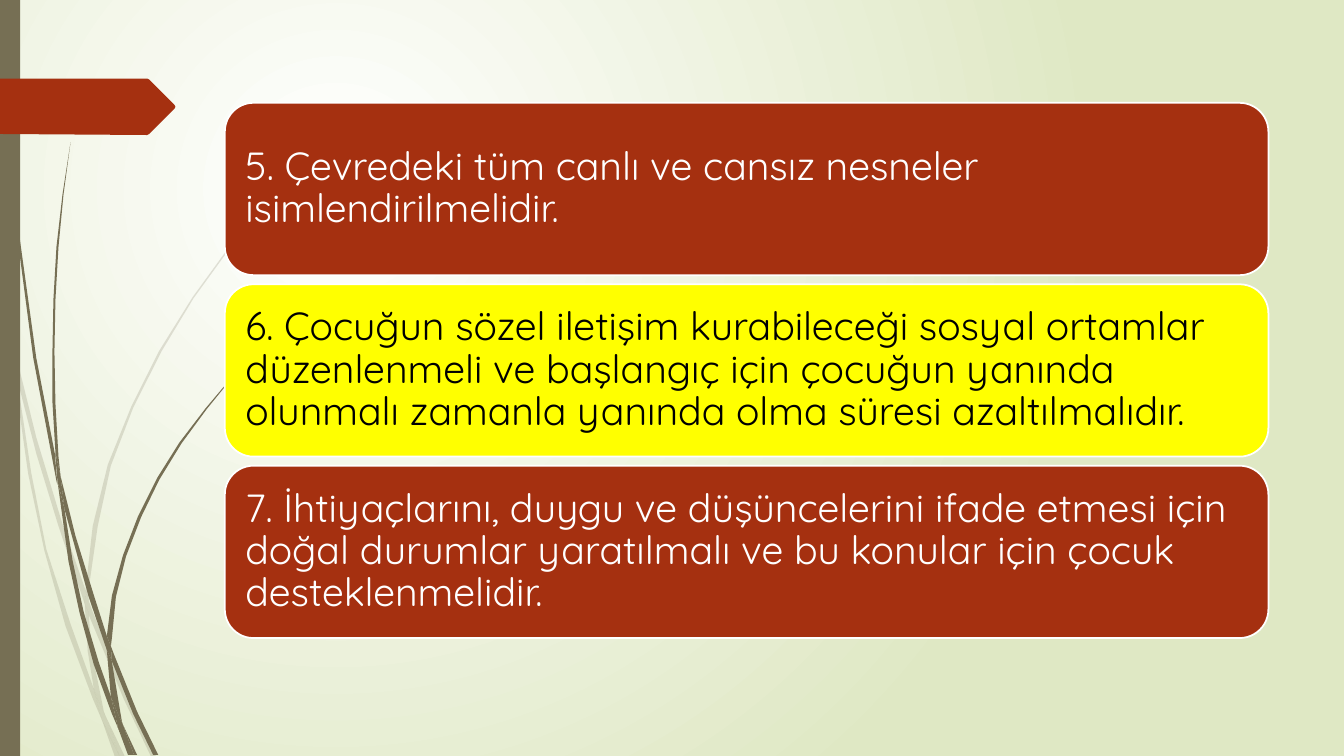
from lxml.etree import SubElement
from pptx import Presentation
from pptx.dml.color import RGBColor
from pptx.enum.shapes import MSO_SHAPE as Preset
from pptx.enum.text import MSO_ANCHOR as Anchor, PP_ALIGN as Align
from pptx.oxml.ns import qn
from pptx.util import Inches, Pt

OLIVE, RUST, YELLOW, WHITE, BLACK = "766F54", "A53010", "FFFF00", "FFFFFF", "000000"


def paint(shape, color):
    """Fill a shape with a hex colour, without line or shadow."""
    shape.shadow.inherit = False
    shape.fill.solid()
    shape.fill.fore_color.rgb = RGBColor.from_string(color)
    shape.line.fill.background()


def add_outline(shapes, points, color):
    """Add a closed shape through points given in hundredths of an inch."""
    builder = shapes.build_freeform(*points[0], scale=Inches(0.01))
    builder.add_line_segments(points[1:], close=True)
    outline = builder.convert_to_shape()
    paint(outline, color)
    return outline


prs = Presentation()
prs.slide_width, prs.slide_height = Inches(13.33), Inches(7.5)
slide = prs.slides.add_slide(prs.slide_layouts[6])

# Background: light spot that fades outwards
backdrop = slide.background.fill
backdrop.gradient()
for stop, color in zip(backdrop.gradient_stops, (WHITE, "DFE8C4")):
    stop.color.rgb = RGBColor.from_string(color)
for stop, position in zip(backdrop.gradient_stops, (0, 1)):
    stop.position = position
gradient = slide.element.find(".//" + qn("a:gradFill"))
gradient.remove(gradient.find(qn("a:lin")))
glow = SubElement(gradient, qn("a:path"), path="circle")
SubElement(glow, qn("a:fillToRect"), l="50000", t="50000", r="100000", b="100000")

# Grass blades, in hundredths of an inch
pale_blades = [
    [(11, 350), (9, 322), (0, 282), (0, 299), (10, 344)],
    [(58, 522), (84, 599), (85, 586), (62, 520), (36, 434), (14, 345), (17, 376), (36, 450)],
    [(92, 607), (88, 596), (88, 610), (123, 694), (150, 751), (155, 751), (127, 692)],
    [(119, 751), (124, 751), (105, 711)],
    [(93, 683), (70, 619), (46, 545), (31, 469), (17, 376), (11, 350), (28, 470),
     (44, 546), (65, 621), (92, 693), (101, 714), (99, 707)],
    [(84, 599), (87, 646), (93, 683), (96, 692), (105, 711), (103, 706), (91, 646),
     (88, 610), (88, 608)],
    [(88, 584), (97, 522), (110, 462), (132, 405), (160, 349), (192, 296), (229, 245),
     (268, 198), (290, 175), (312, 154), (312, 153), (289, 175), (268, 197), (228, 244),
     (191, 295), (158, 348), (130, 404), (107, 461), (92, 522), (85, 584), (85, 586),
     (88, 596)],
    [(101, 714), (114, 751), (119, 751)],
    [(88, 608), (88, 610), (88, 596), (85, 586), (84, 599)],
    [(96, 692), (93, 683), (99, 707), (101, 714), (119, 751), (105, 711)],
]
dark_blades = [
    [(7, 110), (17, 233), (33, 355), (56, 477), (57, 481), (55, 457), (55, 453),
     (36, 355), (19, 232), (8, 109), (5, 48), (4, 0), (3, 0), (4, 48)],
    [(88, 592), (106, 645), (106, 631), (93, 590), (75, 532), (60, 472), (64, 505)],
    [(113, 649), (110, 641), (111, 656), (132, 708), (152, 749), (157, 749), (136, 706)],
    [(110, 691), (98, 657), (83, 607), (72, 556), (64, 505), (57, 477), (68, 557),
     (79, 608), (93, 659), (111, 708), (117, 722), (116, 717)],
    [(60, 472), (58, 453), (55, 401), (54, 349), (55, 297), (58, 245), (63, 193),
     (70, 141), (62, 193), (56, 245), (53, 297), (52, 349), (52, 399), (55, 449)],
    [(133, 749), (136, 749), (122, 719)],
    [(57, 477), (64, 505), (60, 472), (55, 449), (55, 453)],
    [(111, 633), (115, 592), (125, 552), (140, 513), (158, 476), (180, 440), (205, 406),
     (231, 374), (245, 359), (261, 344), (260, 344), (245, 358), (231, 373), (204, 405),
     (178, 439), (156, 474), (137, 512), (122, 551), (111, 591), (106, 631), (110, 641)],
    [(117, 722), (127, 749), (131, 749)],
    [(106, 645), (110, 691), (116, 706), (122, 719), (121, 716), (111, 656), (109, 651)],
    [(106, 645), (109, 651), (111, 656), (110, 641), (106, 631)],
    [(116, 706), (110, 691), (116, 717), (117, 722), (130, 749), (133, 749), (122, 719)],
]
for blades, opacity in ((pale_blades, 20), (dark_blades, 100)):
    tuft = slide.shapes.add_group_shape()
    for points in blades:
        blade = add_outline(tuft.shapes, points, OLIVE)
        if opacity < 100:
            tint = blade.element.spPr.find(qn("a:solidFill"))[0]
            SubElement(tint, qn("a:alpha"), val=str(opacity * 1000))

# Side strip and page marker
strip = slide.shapes.add_shape(Preset.RECTANGLE, 0, 0, Inches(0.2), prs.slide_height)
paint(strip, OLIVE)
marker = [(173, 108), (148, 133), (146, 134), (0, 133), (0, 78), (146, 78), (148, 79),
          (173, 104), (174, 106)]
add_outline(slide.shapes, marker, RUST)

# Advice cards
cards = [
    ("5. Çevredeki tüm canlı ve cansız nesneler isimlendirilmelidir.", RUST, WHITE),
    ("6. Çocuğun sözel iletişim kurabileceği sosyal ortamlar düzenlenmeli ve başlangıç için "
     "çocuğun yanında olunmalı zamanla yanında olma süresi azaltılmalıdır.", YELLOW, BLACK),
    ("7. İhtiyaçlarını, duygu ve düşüncelerini ifade etmesi için doğal durumlar yaratılmalı "
     "ve bu konular için çocuk desteklenmelidir.", RUST, WHITE),
]
card_top, card_pitch = 1.02, 1.8
for row, (advice, fill, ink) in enumerate(cards):
    card = slide.shapes.add_shape(
        Preset.ROUNDED_RECTANGLE, Inches(2.23), Inches(card_top + row * card_pitch),
        Inches(10.35), Inches(1.71))
    paint(card, fill)
    card.line.color.rgb = RGBColor.from_string(WHITE)
    card.line.width = Pt(1.25)
    frame = card.text_frame
    frame.word_wrap = True
    frame.vertical_anchor = Anchor.MIDDLE
    frame.margin_left = frame.margin_right = Inches(0.12)
    frame.margin_top = frame.margin_bottom = Inches(0.12)
    paragraph = frame.paragraphs[0]
    paragraph.text = advice
    paragraph.alignment = Align.LEFT
    paragraph.line_spacing = 0.9
    paragraph.font.name = "Quicksand"
    paragraph.font.size = Pt(28)
    paragraph.font.color.rgb = RGBColor.from_string(ink)

prs.save("out.pptx")
